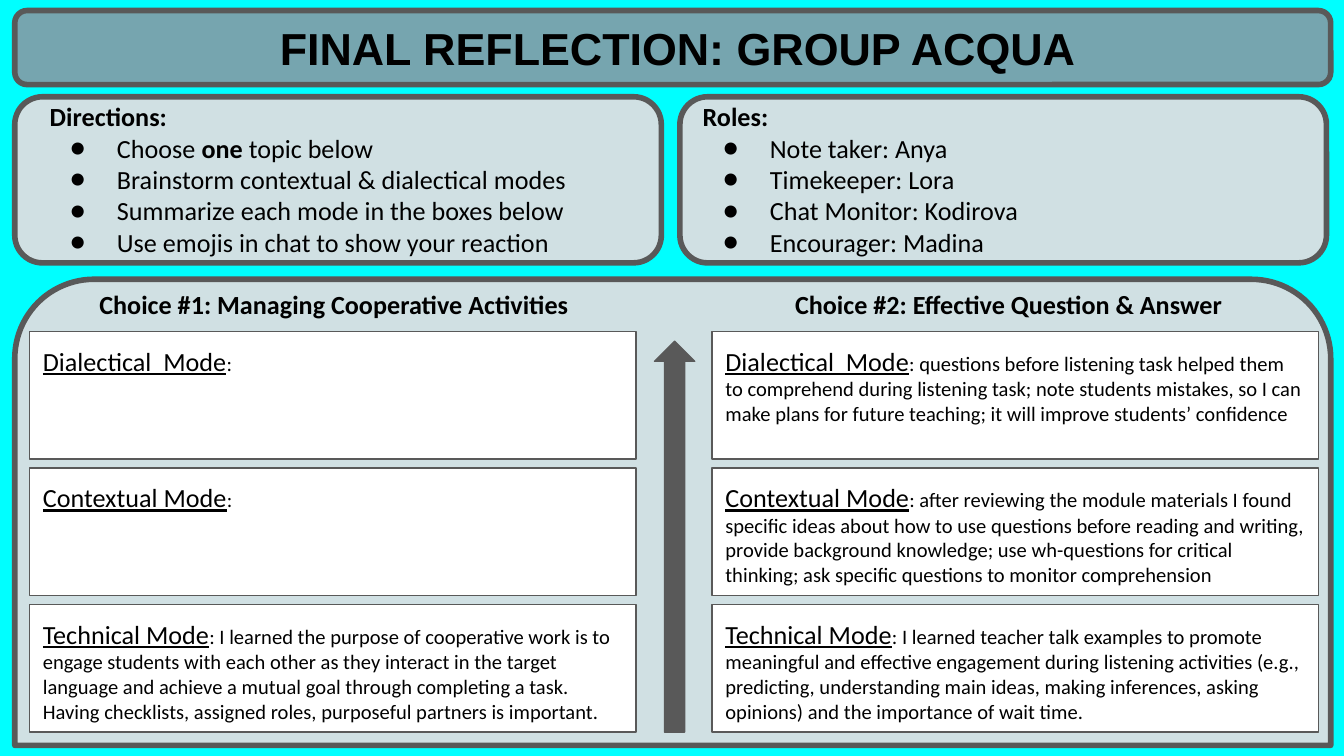
from lxml import etree
from pptx import Presentation
from pptx.dml.color import RGBColor
from pptx.enum.shapes import MSO_SHAPE
from pptx.enum.text import MSO_ANCHOR, MSO_AUTO_SIZE, PP_ALIGN
from pptx.oxml.ns import qn
from pptx.util import Cm, Pt

ROUND = MSO_SHAPE.ROUNDED_RECTANGLE
ARCH = MSO_SHAPE.ROUND_2_SAME_RECTANGLE
RECT = MSO_SHAPE.RECTANGLE
ARROW = MSO_SHAPE.UP_ARROW
LEFT, CENTER = PP_ALIGN.LEFT, PP_ALIGN.CENTER

AQUA, TEAL, PALE = "00FFFF", "76A5AF", "D0E0E3"
GREY, WHITE, BLACK = "595959", "FFFFFF", "000000"

TITLE = "FINAL REFLECTION: GROUP ACQUA"
# Each list item is a row of (text, bold) runs.
LISTS = [
    ("Directions:", [
        [("Choose ", False), ("one", True), (" topic below", False)],
        [("Brainstorm contextual & dialectical modes", False)],
        [("Summarize each mode in the boxes below", False)],
        [("Use emojis in chat to show your reaction", False)],
    ]),
    ("Roles:", [
        [("Note taker: Anya", False)],
        [("Timekeeper: Lora", False)],
        [("Chat Monitor: Kodirova", False)],
        [("Encourager: Madina", False)],
    ]),
]
MODES = ["Dialectical  Mode", "Contextual Mode", "Technical Mode"]
CHOICES = [
    ("Choice #1: Managing Cooperative Activities", [
        ":",
        ":",
        ": I learned the purpose of cooperative work is to engage students "
        "with each other as they interact in the target language and achieve "
        "a mutual goal through completing a task. Having checklists, assigned "
        "roles, purposeful partners is important.",
    ]),
    ("Choice #2: Effective Question & Answer", [
        ": questions before listening task helped them to comprehend during "
        "listening task; note students mistakes, so I can make plans for "
        "future teaching; it will improve students’ confidence",
        ": after reviewing the module materials I found specific ideas about "
        "how to use questions before reading and writing, provide background "
        "knowledge; use wh-questions for critical thinking; ask specific "
        "questions to monitor comprehension",
        ": I learned teacher talk examples to promote meaningful and "
        "effective engagement during listening activities (e.g., predicting, "
        "understanding main ideas, making inferences, asking opinions) and "
        "the importance of wait time.",
    ]),
]

# Left edges of both columns, in cm
PANEL_X = [0.28, 12.85]
LIST_X = [0.69, 13.03]
HEAD_X = [0.28, 13.03]
CELL_X = [0.56, 13.46]
CELL_Y, CELL_STEP = 6.27, 2.58


def color(code):
    return RGBColor.from_string(code)


def add_box(kind, x, y, w, h, fill, line=3):
    box = slide.shapes.add_shape(kind, Cm(x), Cm(y), Cm(w), Cm(h))
    box.shadow.inherit = False
    box.fill.solid()
    box.fill.fore_color.rgb = color(fill)
    box.line.color.rgb = color(GREY)
    box.line.width = Pt(line)
    return box


def set_frame(shape):
    frame = shape.text_frame
    frame.word_wrap = True
    frame.auto_size = MSO_AUTO_SIZE.NONE
    frame.vertical_anchor = MSO_ANCHOR.TOP
    frame.margin_left = frame.margin_right = Cm(0.25)
    frame.margin_top = frame.margin_bottom = Cm(0.25)
    return frame


def add_run(para, text, size=14, bold=False, under=False, face="Calibri"):
    run = para.add_run()
    run.text = text
    font = run.font
    font.name, font.size = face, Pt(size)
    font.bold, font.underline = bold, under
    font.color.rgb = color(BLACK)


def set_bullet(para, mark, left=0, hang=0):
    """Give the paragraph a black bullet, or none if mark is empty."""
    props = para._p.get_or_add_pPr()
    props.set("marL", str(Cm(left)))
    props.set("indent", str(Cm(-hang)))
    if not mark:
        etree.SubElement(props, qn("a:buNone"))
        return
    tint = etree.SubElement(props, qn("a:buClr"))
    etree.SubElement(tint, qn("a:srgbClr")).set("val", BLACK)
    etree.SubElement(props, qn("a:buFont")).set("typeface", "Calibri")
    etree.SubElement(props, qn("a:buChar")).set("char", mark)


def place(holder, x, y, w, h):
    """Position a placeholder and bring it to the front."""
    holder.left, holder.top = Cm(x), Cm(y)
    holder.width, holder.height = Cm(w), Cm(h)
    slide.shapes._spTree.append(holder._element)
    return set_frame(holder)


deck = Presentation()
deck.slide_width, deck.slide_height = Cm(25.4), Cm(14.29)
slide = deck.slides.add_slide(deck.slide_layouts[3])
slide.background.fill.solid()
slide.background.fill.fore_color.rgb = color(AQUA)
title, *bodies = slide.placeholders

# Title bar
add_box(ROUND, 0.28, 0.2, 24.87, 1.4, TEAL)
para = place(title, 0.46, 0.15, 24.69, 1.4).paragraphs[0]
para.alignment = CENTER
add_run(para, TITLE, 24, bold=True, face="Arial")

# Directions and roles
for body, (head, items), px, lx in zip(bodies, LISTS, PANEL_X, LIST_X):
    add_box(ROUND, px, 1.83, 12.22, 3.14, PALE)
    frame = place(body, lx, 1.65, 11.2, 3.33)
    para = frame.paragraphs[0]
    para.space_before = Pt(0)
    set_bullet(para, "")
    add_run(para, head, bold=True)
    for item in items:
        para = frame.add_paragraph()
        para.space_before = Pt(0)
        set_bullet(para, "●", 1.27, 0.89)
        for text, bold in item:
            add_run(para, text, bold=bold)

# Choices with their modes
arch = add_box(ARCH, 0.28, 5.28, 24.87, 8.81, PALE)
arch.adjustments[0] = 0.17
for (head, notes), hx, cx in zip(CHOICES, HEAD_X, CELL_X):
    label = slide.shapes.add_textbox(Cm(hx), Cm(5.21), Cm(12.07), Cm(0.99))
    para = set_frame(label).paragraphs[0]
    para.alignment = CENTER
    add_run(para, head, bold=True)
    for row, (mode, note) in enumerate(zip(MODES, notes)):
        y = CELL_Y + row * CELL_STEP
        cell = add_box(RECT, cx, y, 11.46, 2.41, WHITE, 0.75)
        para = set_frame(cell).paragraphs[0]
        para.alignment = LEFT
        add_run(para, mode, under=True)
        add_run(para, note, 11)

add_box(ARROW, 12.37, 6.45, 0.76, 7.39, GREY, 0.75)

deck.save("out.pptx")
